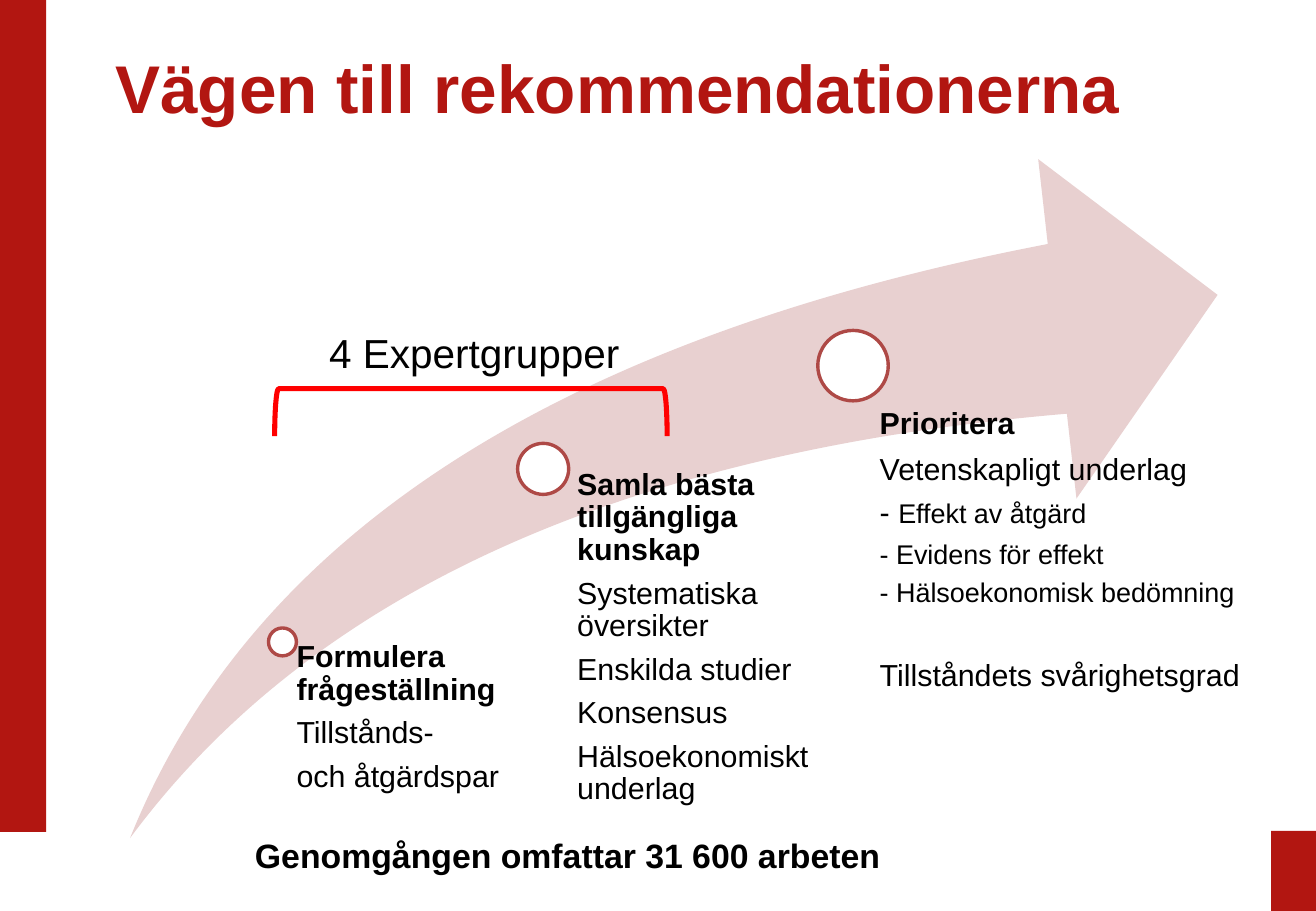
from pptx import Presentation
from pptx.dml.color import RGBColor
from pptx.enum.shapes import MSO_SHAPE
from pptx.enum.text import MSO_ANCHOR, MSO_AUTO_SIZE, PP_ALIGN
from pptx.util import Inches, Pt

RED, BLACK, WHITE = "B21611", "000000", "FFFFFF"
TITLE = "Vägen till rekommendationerna"
BARS = [(0, 0, 0.38, 6.85), (10.46, 6.84, 0.38, 0.67)]

# Each paragraph: space before in points, then runs of (text, size, bold)
STEPS = [
    {"circle": (2.21, 5.17, 0.23), "box": (2.32, 5.28, 2.08, 1.62), "inset": 0.12,
     "paragraphs": [
         (0, [("Formulera frågeställning", 18, True)]),
         (0, [("Tillstånds-", 18, False)]),
         (0, [("och åtgärdspar", 18, False)])]},
    {"circle": (4.26, 3.65, 0.42), "box": (4.53, 3.86, 2.15, 3.04), "inset": 0.22,
     "paragraphs": [
         (0, [("Samla bästa tillgängliga kunskap", 18, True)]),
         (0, [("Systematiska översikter", 18, False)]),
         (0, [("Enskilda studier", 18, False)]),
         (0, [("Konsensus", 18, False)]),
         (0, [("Hälsoekonomiskt underlag", 18, False)])]},
    {"circle": (6.73, 2.72, 0.58), "box": (6.93, 3.36, 3.43, 2.15), "inset": 0.31,
     "paragraphs": [
         (0, [("Prioritera", 18, True)]),
         (1.5, [("Vetenskapligt underlag", 18, False)]),
         (0, [("- ", 18, False), ("Effekt av åtgärd", 16, False)]),
         (0, [("- Evidens för effekt", 16, False)]),
         (0, [("- Hälsoekonomisk bedömning", 16, False)]),
         (25, [("Tillståndets svårighetsgrad", 18, False)])]},
]
LABELS = [
    ((2.61, 2.65, 2.62, 0.51), ("4 Expertgrupper", 24, False)),
    ((2, 6.82, 5.39, 0.44), ("Genomgången omfattar 31 600 arbeten", 20, True)),
]


def color(hex_code):
    return RGBColor.from_string(hex_code)


def add_run(paragraph, text, size, bold, hex_code=BLACK):
    run = paragraph.add_run()
    run.text = text
    run.font.name = "Arial"
    run.font.size = Pt(size)
    run.font.bold = bold
    run.font.color.rgb = color(hex_code)


def add_shape(slide, kind, box, fill=None, line=None, width=0):
    shape = slide.shapes.add_shape(kind, *map(Inches, box))
    shape.shadow.inherit = False
    if fill:
        shape.fill.solid()
        shape.fill.fore_color.rgb = color(fill)
    else:
        shape.fill.background()
    if line:
        shape.line.color.rgb = color(line)
        shape.line.width = Pt(width)
    else:
        shape.line.fill.background()
    return shape


def add_title(slide):
    title = slide.shapes.title
    title.left, title.top, title.width, title.height = map(Inches, (0.85, 0.13, 9.55, 1.25))
    frame = title.text_frame
    frame.auto_size = MSO_AUTO_SIZE.NONE
    frame.vertical_anchor = MSO_ANCHOR.MIDDLE
    paragraph = frame.paragraphs[0]
    paragraph.alignment = PP_ALIGN.LEFT
    paragraph.line_spacing = 0.9
    add_run(paragraph, TITLE, 40, True, RED)


def add_step(slide, step):
    """Add a circle on the arrow and the text that belongs to it."""
    left, top, diameter = step["circle"]
    add_shape(slide, MSO_SHAPE.OVAL, (left, top, diameter, diameter), WHITE, "AE4946", 2)
    frame = slide.shapes.add_textbox(*map(Inches, step["box"])).text_frame
    frame.word_wrap = True
    frame.margin_left = Inches(step["inset"])
    frame.margin_top = frame.margin_right = frame.margin_bottom = 0
    for index, (space_before, runs) in enumerate(step["paragraphs"]):
        paragraph = frame.add_paragraph() if index else frame.paragraphs[0]
        paragraph.line_spacing = 0.9
        paragraph.space_before = Pt(space_before)
        paragraph.space_after = Pt(0.35 * runs[0][1])
        for run in runs:
            add_run(paragraph, *run)


def main():
    presentation = Presentation()
    presentation.slide_width, presentation.slide_height = Inches(10.83), Inches(7.5)
    slide = presentation.slides.add_slide(presentation.slide_layouts[5])
    for bar in BARS:
        add_shape(slide, MSO_SHAPE.RECTANGLE, bar, RED)
    add_title(slide)

    arrow = add_shape(slide, MSO_SHAPE.SWOOSH_ARROW, (1.07, 1.31, 8.95, 5.59), "E8D0D0")
    arrow.adjustments[0] = arrow.adjustments[1] = 0.25
    for step in STEPS:
        add_step(slide, step)

    bracket = add_shape(slide, MSO_SHAPE.LEFT_BRACKET, (3.68, 1.78, 0.39, 3.23),
                        line="FF0000", width=3)
    bracket.adjustments[0] = 0.083
    bracket.rotation = 90
    for box, run in LABELS:
        frame = slide.shapes.add_textbox(*map(Inches, box)).text_frame
        frame.word_wrap = False
        frame.auto_size = MSO_AUTO_SIZE.SHAPE_TO_FIT_TEXT
        add_run(frame.paragraphs[0], *run)
    presentation.save("out.pptx")


if __name__ == "__main__":
    main()
